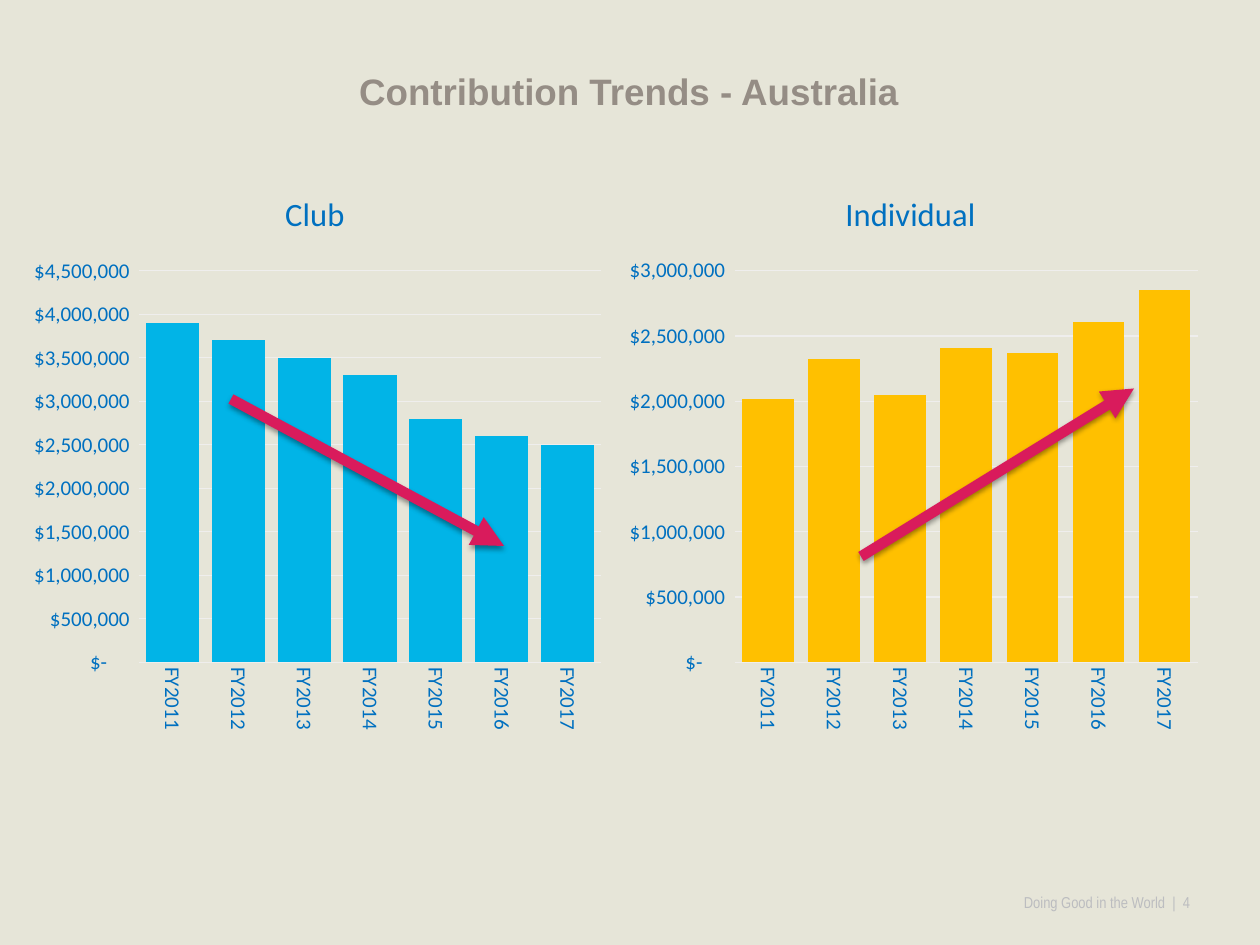
from dataclasses import dataclass

from lxml import etree
from pptx import Presentation
from pptx.chart.data import CategoryChartData
from pptx.dml.color import RGBColor
from pptx.enum.chart import XL_CHART_TYPE, XL_TICK_MARK
from pptx.enum.shapes import MSO_CONNECTOR
from pptx.enum.text import MSO_ANCHOR, MSO_AUTO_SIZE, PP_ALIGN
from pptx.oxml import parse_xml
from pptx.oxml.ns import nsdecls, qn
from pptx.util import Pt

COLUMN = XL_CHART_TYPE.COLUMN_CLUSTERED
NO_TICK = XL_TICK_MARK.NONE
STRAIGHT = MSO_CONNECTOR.STRAIGHT
MIDDLE = MSO_ANCHOR.MIDDLE
LEFT, RIGHT = PP_ALIGN.LEFT, PP_ALIGN.RIGHT
NO_AUTOFIT = MSO_AUTO_SIZE.NONE
TITLE_ONLY = 5

DOLLARS = '_("$"* #,##0_);_("$"* \\(#,##0\\);_("$"* "-"??_);_(@_)'
YEARS = [f"FY{year}" for year in range(2011, 2018)]


@dataclass(frozen=True)
class Theme:
    background: str = "E6E5D8"
    heading: str = "958D85"
    label: str = "0070C0"
    grid: str = "EFEEED"
    footer: str = "BCBDC0"
    arrow: str = "D91B5C"
    club: str = "01B4E7"
    individual: str = "FFC000"
    heading_size: float = 21
    chart_title_size: float = 18.6
    axis_size: float = 12
    chart_size: float = 10
    footer_size: float = 9
    heading_font: str = "Arial"
    chart_font: str = "Calibri"
    footer_font: str = "Arial Narrow"


class SlideBuilder:
    def __init__(self, slide, theme):
        self.s = slide
        self.theme = theme
        fill = slide.background.fill
        fill.solid()
        fill.fore_color.rgb = RGBColor.from_string(theme.background)

    def style(self, font, name, size, color, bold=False):
        font.name, font.size, font.bold = name, Pt(size), bold
        font.color.rgb = RGBColor.from_string(color)

    def place(self, sp, left, top, width, height):
        sp.left, sp.top, sp.width, sp.height = map(Pt, (left, top, width, height))

    def title(self, text, *box):
        t = self.theme
        sp = self.s.shapes.title
        self.place(sp, *box)
        tf = sp.text_frame
        tf.word_wrap, tf.auto_size = False, NO_AUTOFIT
        tf.vertical_anchor = MIDDLE
        p = tf.paragraphs[0]
        p.alignment = LEFT
        r = p.add_run()
        r.text = text
        self.style(r.font, t.heading_font, t.heading_size, t.heading, True)

    def footer(self, text, *box):
        t = self.theme
        tf = self.s.shapes.add_textbox(*map(Pt, box)).text_frame
        tf.word_wrap = True
        tf.margin_left = tf.margin_top = tf.margin_bottom = 0
        tf.margin_right = Pt(4)
        p = tf.paragraphs[0]
        p.alignment = RIGHT
        r = p.add_run()
        r.text = text
        self.style(r.font, t.footer_font, t.footer_size, t.footer)

    def layout(self, parent, index, target="", **fractions):
        """Fix the position of a chart part as fractions of the chart."""
        old = parent.find(qn("c:layout"))
        if old is not None:
            parent.remove(old)
        modes = "".join(f'<c:{k}Mode val="edge"/>' for k in "xy")
        values = "".join(f'<c:{k} val="{v}"/>' for k, v in fractions.items())
        parent.insert(index, parse_xml(
            f'<c:layout {nsdecls("c")}><c:manualLayout>{target}{modes}{values}'
            "</c:manualLayout></c:layout>"))

    def column_chart(self, name, values, color, gap, top_value, step, title_x, *box):
        t = self.theme
        data = CategoryChartData(number_format=DOLLARS)
        data.categories = YEARS
        data.add_series(name, values)
        chart = self.s.shapes.add_chart(COLUMN, *map(Pt, box), data).chart
        self.style(chart.font, t.chart_font, t.chart_size, t.heading)
        chart.has_legend = False

        # Chart title
        chart.has_title = True
        r = chart.chart_title.text_frame.paragraphs[0].add_run()
        r.text = name
        self.style(r.font, t.chart_font, t.chart_title_size, t.label)
        chart.chart_title.include_in_layout = False
        self.layout(chart.chart_title._element, 1, x=title_x, y=0.03)

        # Columns
        plot = chart.plots[0]
        plot.gap_width, plot.overlap, plot.vary_by_categories = gap, -27, False
        fill = plot.series[0].format.fill
        fill.solid()
        fill.fore_color.rgb = RGBColor.from_string(color)
        area = chart._chartSpace.find(".//" + qn("c:plotArea"))
        self.layout(area, 0, '<c:layoutTarget val="inner"/>',
                    x=0.205, y=0.18, w=0.775, h=0.683)

        # Axes and gridlines
        cat, val = chart.category_axis, chart.value_axis
        for axis in (cat, val):
            axis.major_tick_mark = axis.minor_tick_mark = NO_TICK
            self.style(axis.tick_labels.font, t.chart_font, t.axis_size, t.label)
        body = cat._element.find(qn("c:txPr")).find(qn("a:bodyPr"))
        body.set("rot", "5400000")
        body.set("vert", "horz")
        val.minimum_scale, val.maximum_scale, val.major_unit = 0, top_value, step
        val.tick_labels.number_format = DOLLARS
        val.tick_labels.number_format_is_linked = False
        val.has_major_gridlines = True
        val.format.line.fill.background()
        for line in (cat.format.line, val.major_gridlines.format.line):
            line.color.rgb = RGBColor.from_string(t.grid)
            line.width = Pt(0.75)

    def arrow(self, *ends):
        sp = self.s.shapes.add_connector(STRAIGHT, *map(Pt, ends))
        sp.line.color.rgb = RGBColor.from_string(self.theme.arrow)
        sp.line.width = Pt(6)
        etree.SubElement(sp.line._get_or_add_ln(), qn("a:tailEnd"), type="triangle")
        sp._element.spPr.append(parse_xml(
            f'<a:effectLst {nsdecls("a")}><a:outerShdw blurRad="{Pt(3.1)}" '
            f'dist="{Pt(1.6)}" dir="5400000" rotWithShape="0">'
            '<a:srgbClr val="000000"><a:alpha val="38000"/></a:srgbClr>'
            "</a:outerShdw></a:effectLst>"))


def main():
    prs = Presentation()
    prs.slide_width, prs.slide_height = Pt(720), Pt(540)
    theme = Theme()
    slide = SlideBuilder(prs.slides.add_slide(prs.slide_layouts[TITLE_ONLY]), theme)

    # Heading and footer
    slide.title("Contribution Trends - Australia", 198, 35.5, 326, 32.4)
    slide.footer("Doing Good in the World  |  4", 558, 510.4, 126, 10.8)

    # Charts side by side
    top, height = 95.8, 327.6
    slide.column_chart(
        "Club", [3900000, 3700000, 3500000, 3300000, 2800000, 2600000, 2500000],
        theme.club, 24, 4500000, 500000, 0.44, 10, top, 340, height)
    slide.column_chart(
        "Individual", [2020000, 2320000, 2050000, 2410000, 2370000, 2610000, 2850000],
        theme.individual, 28, 3000000, 500000, 0.38, 350, top, 341.3, height)

    # Trend arrows
    slide.arrow(132, 228, 288, 312)
    slide.arrow(492, 318, 648, 222)

    prs.save("out.pptx")


if __name__ == "__main__":
    main()
